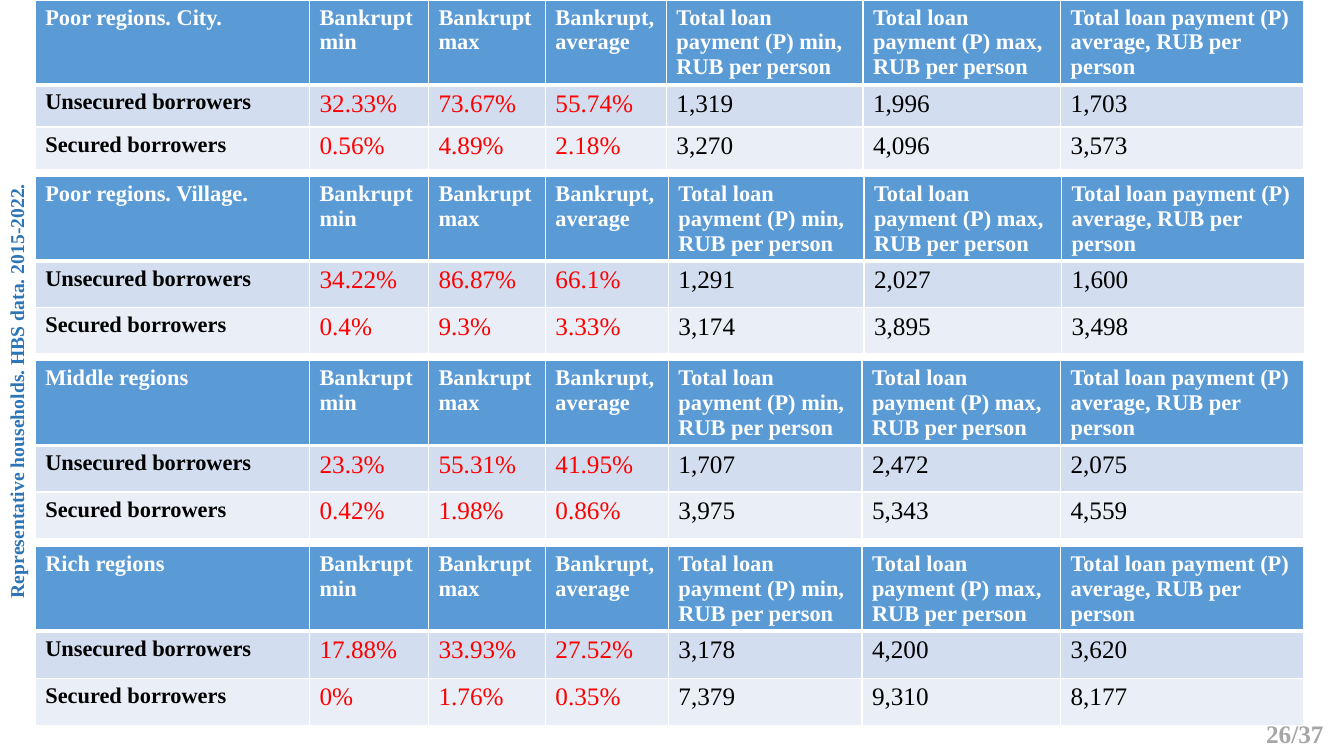
from lxml.etree import SubElement
from pptx import Presentation
from pptx.dml.color import RGBColor
from pptx.enum.text import MSO_ANCHOR as Anchor, MSO_AUTO_SIZE as AutoSize, PP_ALIGN as Align
from pptx.oxml.ns import qn
from pptx.util import Inches, Pt

COLORS = {
    "header": "5B9BD5",
    "unsecured": "D2DEEF",
    "secured": "EAEFF7",
    "white": "FFFFFF",
    "black": "000000",
    "red": "FF0000",
    "title": "2E75B6",
    "page": "A6A6A6",
}
PAYMENT = "Total loan payment (P) {}, RUB per person"
HEADINGS = ["Bankrupt min", "Bankrupt max", "Bankrupt, average"]
HEADINGS += [PAYMENT.format(measure) for measure in ("min", "max", "average")]
REGIONS = [
    {
        "name": "Poor regions. City.", "top": 0, "rows": (0.84, 0.42, 0.42),
        "columns": (2.72, 1.18, 1.16, 1.2, 1.95, 1.96, 2.41),
        "unsecured": ("32.33%", "73.67%", "55.74%", "1,319", "1,996", "1,703"),
        "secured": ("0.56%", "4.89%", "2.18%", "3,270", "4,096", "3,573"),
    },
    {
        "name": "Poor regions. Village.", "top": 1.75, "rows": (0.82, 0.46, 0.46),
        "columns": (2.72, 1.18, 1.16, 1.22, 1.94, 1.96, 2.41),
        "unsecured": ("34.22%", "86.87%", "66.1%", "1,291", "2,027", "1,600"),
        "secured": ("0.4%", "9.3%", "3.33%", "3,174", "3,895", "3,498"),
    },
    {
        "name": "Middle regions", "top": 3.58, "rows": (0.83, 0.46, 0.46),
        "columns": (2.72, 1.18, 1.16, 1.22, 1.92, 1.97, 2.41),
        "unsecured": ("23.3%", "55.31%", "41.95%", "1,707", "2,472", "2,075"),
        "secured": ("0.42%", "1.98%", "0.86%", "3,975", "5,343", "4,559"),
    },
    {
        "name": "Rich regions", "top": 5.42, "rows": (0.84, 0.47, 0.47),
        "columns": (2.72, 1.18, 1.16, 1.22, 1.92, 1.97, 2.41),
        "unsecured": ("17.88%", "33.93%", "27.52%", "3,178", "4,200", "3,620"),
        "secured": ("0%", "1.76%", "0.35%", "7,379", "9,310", "8,177"),
    },
]


def write_text(text_frame, text, size=16, color="black", bold=True, align=Align.LEFT):
    paragraph = text_frame.paragraphs[0]
    paragraph.alignment = align
    run = paragraph.add_run()
    run.text = text
    run.font.name = "Times New Roman"
    run.font.size = Pt(size)
    run.font.bold = bold
    run.font.color.rgb = RGBColor.from_string(COLORS[color])


class SlideBuilder:
    """Holds the slide and adds its title, tables and page number."""

    def __init__(self, slide):
        self.slide = slide

    def add_side_title(self, text, left, top, width, height):
        title = self.slide.shapes.title
        title.left, title.top = Inches(left), Inches(top)
        title.width, title.height = Inches(width), Inches(height)
        title.rotation = 270
        text_frame = title.text_frame
        text_frame.word_wrap = True
        text_frame.auto_size = AutoSize.NONE
        text_frame.vertical_anchor = Anchor.TOP
        write_text(text_frame, text, size=14, color="title", align=Align.CENTER)

    def add_text(self, text, left, top, width, height, **style):
        box = self.slide.shapes.add_textbox(
            Inches(left), Inches(top), Inches(width), Inches(height))
        box.text_frame.word_wrap = True
        write_text(box.text_frame, text, **style)

    def style_cell(self, cell, fill, top_width, bottom_width):
        properties = cell._tc.get_or_add_tcPr()
        for side, width in (("L", 1), ("R", 1), ("T", top_width), ("B", bottom_width)):
            line = SubElement(properties, qn(f"a:ln{side}"), w=str(Pt(width)))
            line_fill = SubElement(line, qn("a:solidFill"))
            SubElement(line_fill, qn("a:srgbClr"), val=COLORS["white"])
        cell.fill.solid()
        cell.fill.fore_color.rgb = RGBColor.from_string(COLORS[fill])

    def add_region_table(self, region):
        contents = [
            ("header", [region["name"], *HEADINGS]),
            ("unsecured", ["Unsecured borrowers", *region["unsecured"]]),
            ("secured", ["Secured borrowers", *region["secured"]]),
        ]
        columns, rows = region["columns"], region["rows"]
        table = self.slide.shapes.add_table(
            len(rows), len(columns), Inches(0.35), Inches(region["top"]),
            Inches(sum(columns)), Inches(sum(rows))).table
        for column, width in zip(table.columns, columns):
            column.width = Inches(width)
        for row_index, (kind, texts) in enumerate(contents):
            table.rows[row_index].height = Inches(rows[row_index])
            for column_index, text in enumerate(texts):
                cell = table.cell(row_index, column_index)
                self.style_cell(cell, kind, 3 if row_index == 1 else 1,
                                3 if row_index == 0 else 1)
                if kind == "header":
                    style = {"color": "white"}
                elif column_index == 0:
                    style = {}
                else:
                    style = {"size": 18, "bold": False,
                             "color": "red" if column_index < 4 else "black"}
                write_text(cell.text_frame, text, **style)


def main():
    presentation = Presentation()
    presentation.slide_width = Inches(13.33)
    presentation.slide_height = Inches(7.5)
    builder = SlideBuilder(presentation.slides.add_slide(presentation.slide_layouts[5]))
    for region in REGIONS:
        builder.add_region_table(region)
    builder.add_side_title("Representative households. HBS data. 2015-2022.",
                           -5.88, 3.71, 12.09, 0.34)
    builder.add_text("26/37", 12.46, 7.08, 0.87, 0.4, size=18, color="page")
    presentation.save("out.pptx")


if __name__ == "__main__":
    main()
